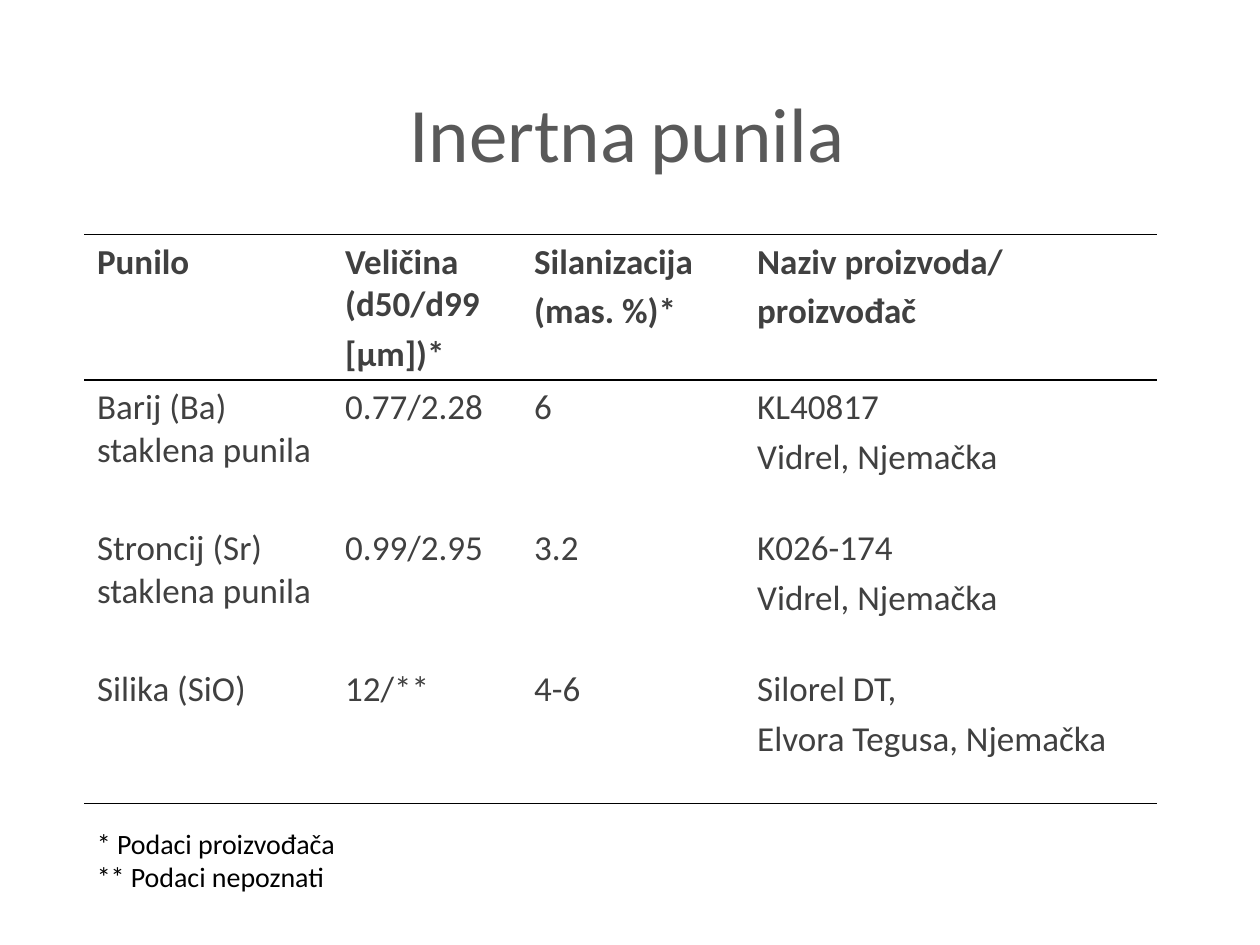
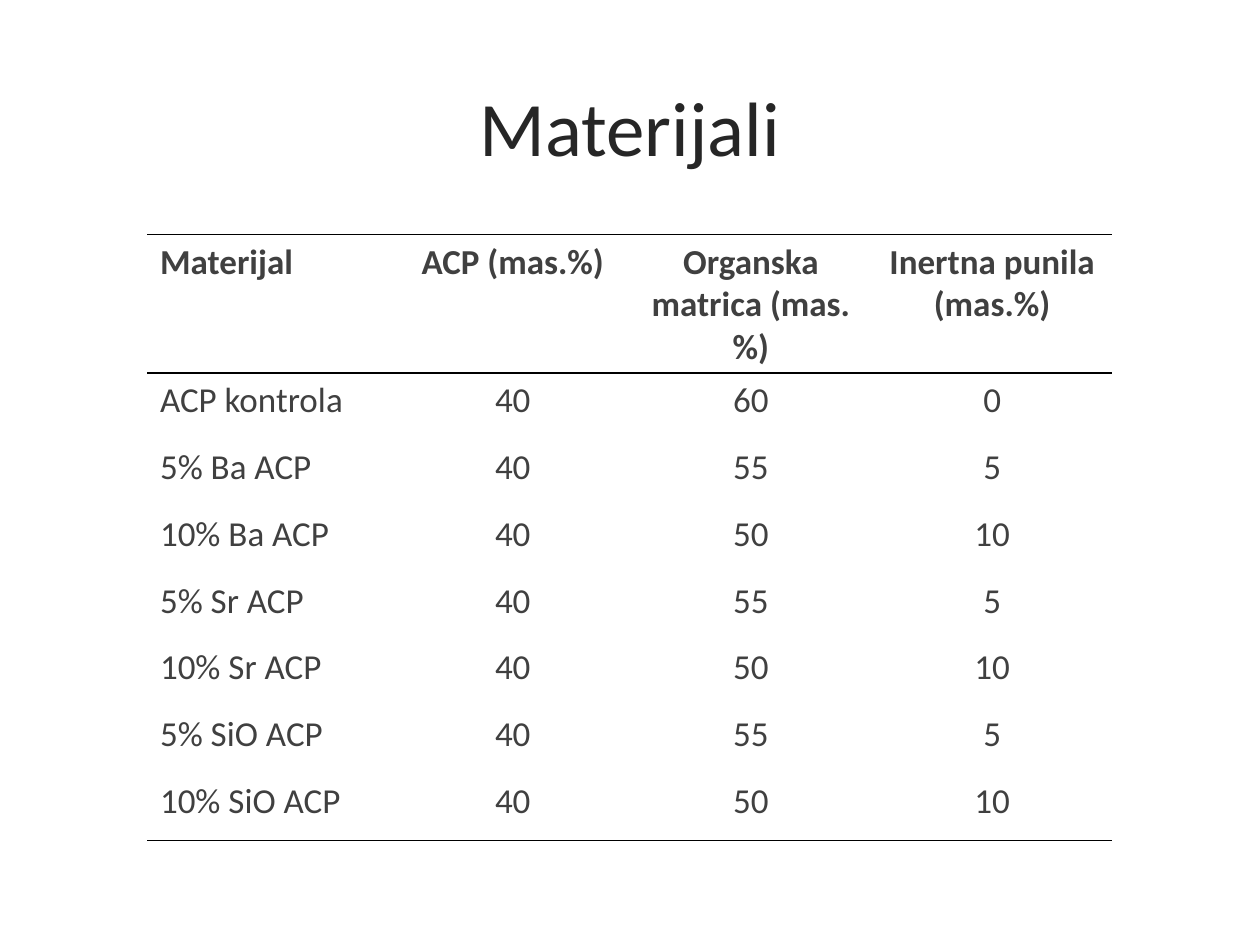
import pptx
import pptx.dml.color
import pptx.enum.text
import pptx.oxml
import pptx.oxml.ns
import pptx.util

Inches, Pt = pptx.util.Inches, pptx.util.Pt
RGB = pptx.dml.color.RGBColor.from_string
ALIGN = pptx.enum.text.PP_ALIGN


class Theme:
    font = "Calibri"
    gray, dark, body, black = "595959", "262626", "404040", "000000"
    head, gap, cell, note = 44, 32, 20, 16
    space = 4
    rule = 1
    plain = "{2D5ABB26-0587-4C30-8999-92F81FD0307C}"


def write(frame, lines, color, align=ALIGN.LEFT, bold=False, space=0):
    """Fill a text frame; each line is a list of (text, size) runs."""
    frame.word_wrap = True
    for i, line in enumerate(lines):
        para = frame.add_paragraph() if i else frame.paragraphs[0]
        para.alignment = align
        if i and space:
            para.space_before = Pt(space)
        for text, size in line:
            run = para.add_run()
            run.text = text
            run.font.name = Theme.font
            run.font.size = Pt(size)
            run.font.bold = bold
            run.font.color.rgb = RGB(color)


def rule(cell, sides):
    """Draw black borders on the given sides, T before B."""
    props = cell._tc.get_or_add_tcPr()
    for i, side in enumerate(sides):
        props.insert(i, pptx.oxml.parse_xml(
            f'<a:ln{side} {pptx.oxml.ns.nsdecls("a")} w="{Pt(Theme.rule)}">'
            f'<a:solidFill><a:srgbClr val="{Theme.black}"/></a:solidFill>'
            f'</a:ln{side}>'))


filler = [
    ["Punilo", "Veličina (d50/d99\n[μm])*", "Silanizacija\n(mas. %)*",
     "Naziv proizvoda/\nproizvođač"],
    ["Barij (Ba) staklena punila", "0.77/2.28", "6",
     "KL40817\nVidrel, Njemačka"],
    ["Stroncij (Sr) staklena punila", "0.99/2.95", "3.2",
     "K026-174\nVidrel, Njemačka"],
    ["Silika (SiO)", "12/**", "4-6",
     "Silorel DT,\nElvora Tegusa, Njemačka"],
]
blend = [
    ["Materijal", "ACP (mas.%)", "Organska matrica (mas.%)",
     "Inertna punila (mas.%)"],
    ["ACP kontrola", "40", "60", "0"],
    ["5% Ba ACP", "40", "55", "5"],
    ["10% Ba ACP", "40", "50", "10"],
    ["5% Sr ACP", "40", "55", "5"],
    ["10% Sr ACP", "40", "50", "10"],
    ["5% SiO ACP", "40", "55", "5"],
    ["10% SiO ACP", "40", "50", "10"],
]
pages = [
    dict(title=[("Inertna", Theme.head), (" ", Theme.gap),
                ("punila", Theme.head)],
         color=Theme.gray, box=(1.14, 0.21, 7.67, 1.67), rows=filler,
         left=0.67, wide=[1.97, 1.5, 1.77, 3.27], tall=1.12,
         align=ALIGN.LEFT, notes=["* Podaci proizvođača",
                                  "** Podaci nepoznati"]),
    dict(title=[("Materijali", Theme.head)],
         color=Theme.dark, box=(1.64, 0.68, 6.72, 0.63), rows=blend,
         left=1.17, wide=[1.97, 1.86, 1.92, 1.91], tall=0.53,
         align=ALIGN.CENTER, notes=[]),
]
top, first = 1.86, 0.96

deck = pptx.Presentation()
deck.slide_width, deck.slide_height = Inches(10), Inches(7.5)

for page in pages:
    slide = deck.slides.add_slide(deck.slide_layouts[6])
    title = slide.shapes.add_textbox(*map(Inches, page["box"])).text_frame
    title.vertical_anchor = pptx.enum.text.MSO_ANCHOR.MIDDLE
    write(title, [page["title"]], page["color"], ALIGN.CENTER)

    rows, wide = page["rows"], page["wide"]
    last = len(rows) - 1
    table = slide.shapes.add_table(
        len(rows), len(wide), Inches(page["left"]), Inches(top),
        Inches(sum(wide)), Inches(first + last * page["tall"])).table
    table.first_row = table.horz_banding = False
    table._tbl.tblPr[0].text = Theme.plain
    for col, width in zip(table.columns, wide):
        col.width = Inches(width)
    for r, row in enumerate(rows):
        table.rows[r].height = Inches(page["tall"] if r else first)
        for c, text in enumerate(row):
            cell = table.cell(r, c)
            cell.fill.background()
            write(cell.text_frame,
                  [[(line, Theme.cell)] for line in text.split("\n")],
                  Theme.body, page["align"] if c else ALIGN.LEFT,
                  bold=r == 0, space=Theme.space)
            if r in (0, last):
                rule(cell, "B" if r else "TB")

    if page["notes"]:
        notes = slide.shapes.add_textbox(
            Inches(page["left"]), Inches(6.51), Inches(8.19), Inches(0.64))
        write(notes.text_frame,
              [[(line, Theme.note)] for line in page["notes"]], Theme.black)

deck.save("out.pptx")
